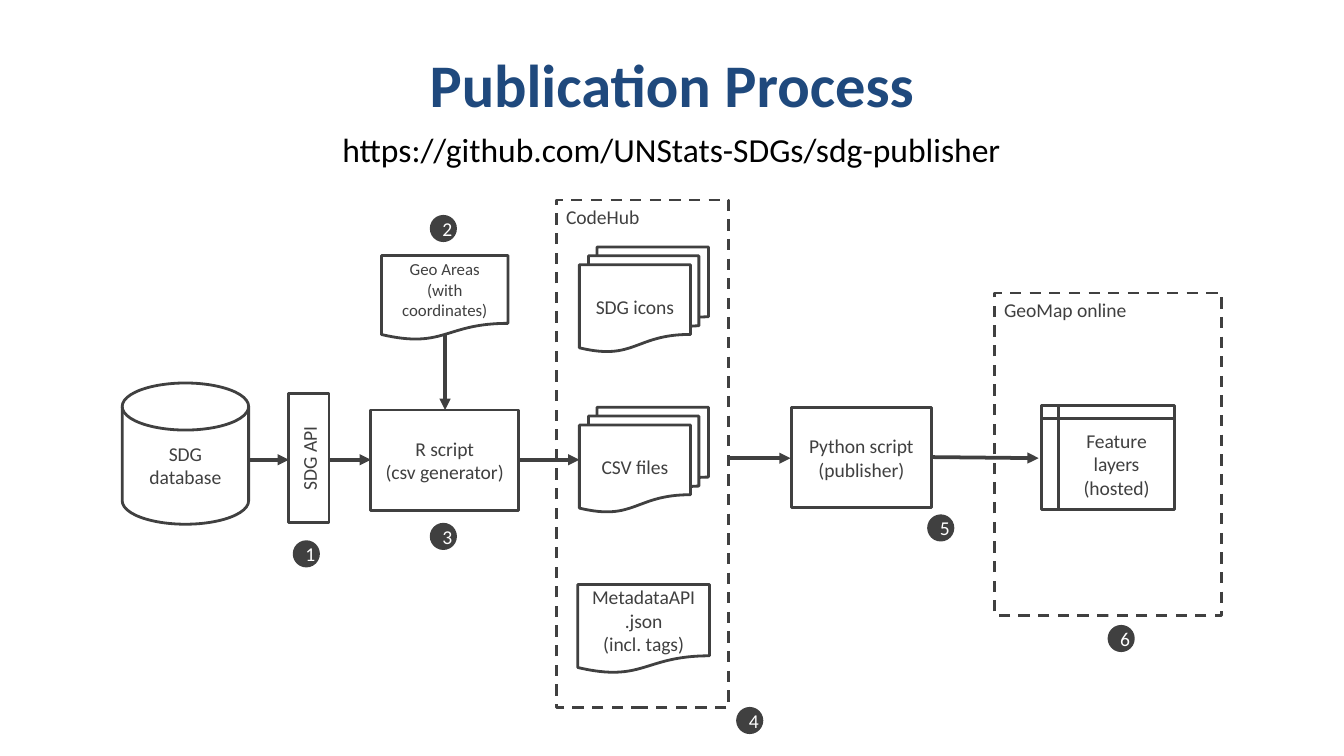
from dataclasses import dataclass

from lxml.etree import SubElement
from pptx import Presentation
from pptx.dml.color import RGBColor
from pptx.enum.dml import MSO_LINE_DASH_STYLE as DASH
from pptx.enum.shapes import MSO_CONNECTOR as CONNECTOR, MSO_SHAPE as SHAPE
from pptx.enum.text import MSO_ANCHOR as ANCHOR, PP_ALIGN as ALIGN
from pptx.oxml.ns import qn
from pptx.util import Cm, Pt


@dataclass(frozen=True)
class Theme:
    font: str = "Calibri"
    title: RGBColor = RGBColor(0x1F, 0x49, 0x7D)
    ink: RGBColor = RGBColor(0x40, 0x40, 0x40)
    black: RGBColor = RGBColor(0, 0, 0)
    white: RGBColor = RGBColor(0xFF, 0xFF, 0xFF)
    title_size: float = 32.4
    link_size: float = 18
    label_size: float = 10.5
    small_size: float = 9
    outline: float = 1.5
    arrow: float = 2


THEME = Theme()
BADGE = 0.46  # badge diameter in cm
FLOW_Y = 8.69  # height of the main flow in cm

# Steps: shape, left, top, width, height, text
STEPS = [
    (SHAPE.FLOWCHART_MAGNETIC_DISK, 2.31, 7.24, 2.39, 2.67, "SDG database"),
    (SHAPE.RECTANGLE, 7.01, 7.75, 2.79, 1.9, "R script\v(csv generator)"),
    (SHAPE.FLOWCHART_MULTIDOCUMENT, 10.95, 4.67, 2.44, 1.98, "SDG icons"),
    (SHAPE.FLOWCHART_MULTIDOCUMENT, 10.95, 7.7, 2.44, 1.98, "CSV files"),
    (SHAPE.RECTANGLE, 14.96, 7.7, 2.64, 1.9, "Python script (publisher)"),
    (SHAPE.FLOWCHART_INTERNAL_STORAGE, 19.69, 7.67, 2.51, 1.96,
     "Feature layers (hosted)"),
]

# Arrows: start x, start y, end x, end y
ARROWS = [
    (4.7, FLOW_Y, 5.46, FLOW_Y),
    (6.22, FLOW_Y, 7.01, FLOW_Y),
    (9.8, FLOW_Y, 10.95, FLOW_Y),
    (8.41, 6.32, 8.41, 7.75),
    (13.79, 8.66, 14.94, 8.66),
    (17.6, 8.64, 19.63, 8.66),
]

# Badges in number order: left, top
BADGES = [(5.56, 10.24), (8.15, 4.09), (8.15, 9.91),
          (13.94, 13.39), (17.55, 9.75), (20.96, 11.84)]


def write(sp, text, size, color, align=ALIGN.CENTER, anchor=ANCHOR.MIDDLE,
          bold=False):
    tf = sp.text_frame
    tf.word_wrap = True
    tf.vertical_anchor = anchor
    tf.text = text
    p = tf.paragraphs[0]
    p.alignment = align
    for r in p.runs:
        r.font.name = THEME.font
        r.font.size = Pt(size)
        r.font.bold = bold
        r.font.color.rgb = color


def add_text(slide, left, top, width, height, text, size, color, **style):
    box = slide.shapes.add_textbox(Cm(left), Cm(top), Cm(width), Cm(height))
    write(box, text, size, color, **style)


def add_node(slide, kind, left, top, width, height, text,
             size=THEME.label_size, color=THEME.ink, tight=True, **style):
    sp = slide.shapes.add_shape(kind, Cm(left), Cm(top), Cm(width), Cm(height))
    sp.shadow.inherit = False
    sp.fill.background()
    sp.line.color.rgb = THEME.ink
    sp.line.width = Pt(THEME.outline)
    if tight:
        tf = sp.text_frame
        tf.margin_left = tf.margin_right = Cm(0.18)
        tf.margin_top = tf.margin_bottom = Cm(0.1)
    write(sp, text, size, color, **style)
    return sp


def add_frame(slide, left, top, width, height, text):
    sp = add_node(slide, SHAPE.RECTANGLE, left, top, width, height, text,
                  align=ALIGN.LEFT, anchor=ANCHOR.TOP)
    sp.line.dash_style = DASH.DASH


def add_badge(slide, number, left, top):
    sp = add_node(slide, SHAPE.OVAL, left, top, BADGE, BADGE, str(number),
                  color=THEME.white)
    sp.fill.solid()
    sp.fill.fore_color.rgb = THEME.ink


def add_arrow(slide, *ends):
    line = slide.shapes.add_connector(CONNECTOR.STRAIGHT, *map(Cm, ends))
    line.line.color.rgb = THEME.ink
    line.line.width = Pt(THEME.arrow)
    SubElement(line.line._get_or_add_ln(), qn("a:tailEnd"), type="triangle")
    SubElement(line._element.spPr, qn("a:effectLst"))


def main():
    prs = Presentation()
    prs.slide_width, prs.slide_height = Cm(25.4), Cm(14.29)
    slide = prs.slides.add_slide(prs.slide_layouts[6])

    # Heading
    add_text(slide, 1.75, 0.76, 21.9, 1.65, "Publication Process",
             THEME.title_size, THEME.title, bold=True)
    add_text(slide, 6.22, 2.31, 15.09, 1.02,
             "https://github.com/UNStats-SDGs/sdg-publisher",
             THEME.link_size, THEME.black, align=ALIGN.LEFT, anchor=ANCHOR.TOP)

    # Platforms
    add_frame(slide, 10.52, 3.78, 3.25, 9.6, "CodeHub")
    add_frame(slide, 18.8, 5.54, 4.29, 6.1, "GeoMap online")

    # Process steps
    for kind, left, top, width, height, text in STEPS:
        add_node(slide, kind, left, top, width, height, text,
                 tight=kind != SHAPE.FLOWCHART_MAGNETIC_DISK)
    api = add_node(slide, SHAPE.FLOWCHART_PROCESS, 4.62, 8.28, 2.44, 0.76,
                   "SDG API")
    api.rotation = 270

    # Input documents
    add_node(slide, SHAPE.FLOWCHART_DOCUMENT, 7.21, 4.83, 2.39, 1.6,
             "Geo Areas\v(with coordinates)", size=THEME.small_size)
    add_node(slide, SHAPE.FLOWCHART_DOCUMENT, 10.92, 11.05, 2.49, 1.68,
             "MetadataAPI.json\v(incl. tags)", tight=False)

    # Flow and step numbers
    for ends in ARROWS:
        add_arrow(slide, *ends)
    for number, (left, top) in enumerate(BADGES, 1):
        add_badge(slide, number, left, top)

    prs.save("out.pptx")


if __name__ == "__main__":
    main()
